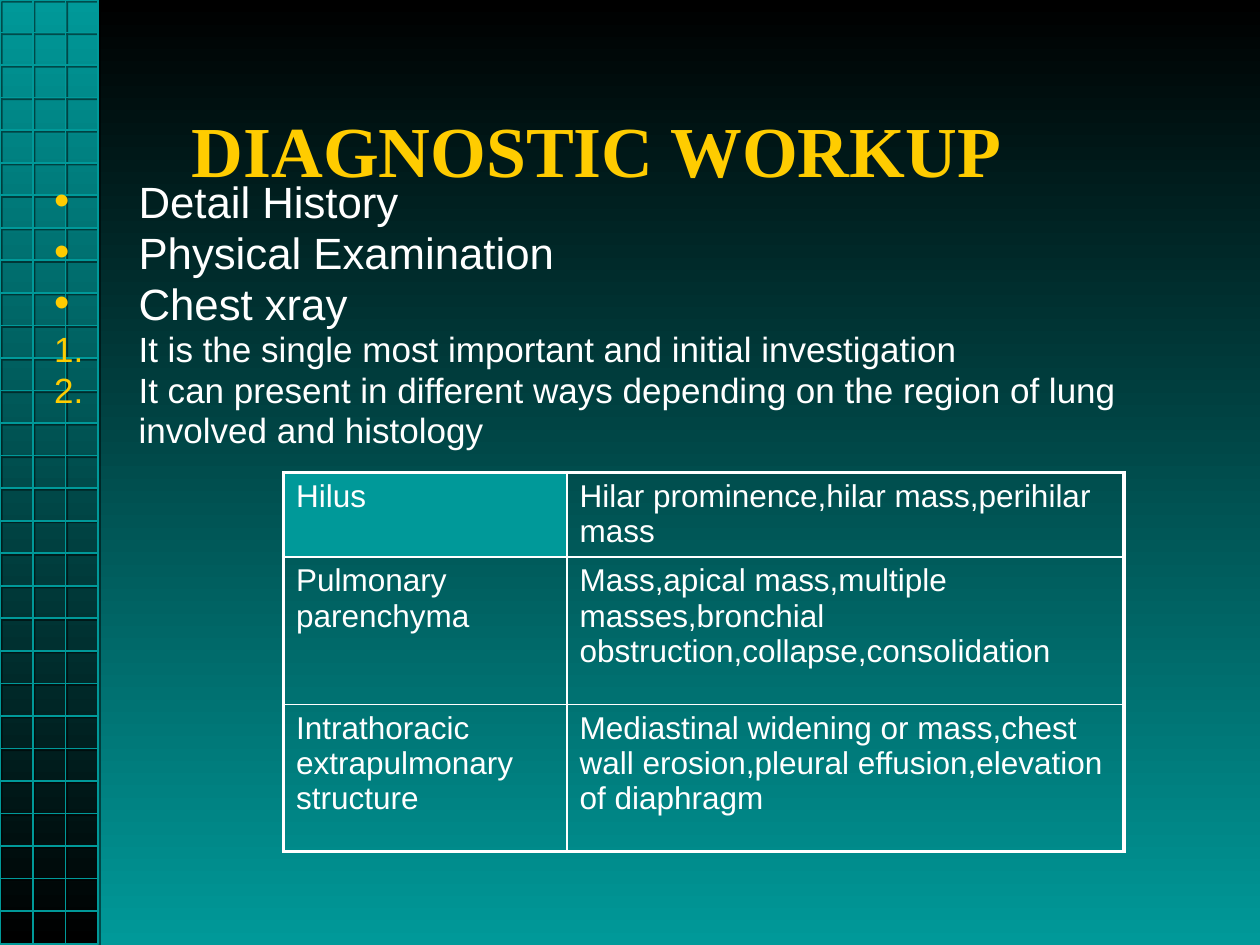
from lxml import etree
from pptx import Presentation
from pptx.dml.color import RGBColor
from pptx.enum.shapes import MSO_SHAPE
from pptx.enum.text import MSO_ANCHOR, MSO_AUTO_SIZE, PP_ALIGN
from pptx.oxml import parse_xml
from pptx.oxml.ns import qn
from pptx.util import Inches, Pt

RECTANGLE = MSO_SHAPE.RECTANGLE
LEFT = PP_ALIGN.LEFT
TOP, MIDDLE = MSO_ANCHOR.TOP, MSO_ANCHOR.MIDDLE
NO_FIT = MSO_AUTO_SIZE.NONE
DRAWING_NS = "http://schemas.openxmlformats.org/drawingml/2006/main"

TITLE = "DIAGNOSTIC WORKUP"
STEPS = ["Detail History", "Physical Examination", "Chest xray"]
XRAY_POINTS = [
    "It is the single most important and initial investigation",
    "It can present in different ways depending on the region of lung involved and histology",
]
FINDINGS = [
    ("Hilus", "Hilar prominence,hilar mass,perihilar mass"),
    ("Pulmonary parenchyma",
     "Mass,apical mass,multiple masses,bronchial obstruction,collapse,consolidation"),
    ("Intrathoracic extrapulmonary structure",
     "Mediastinal widening or mass,chest wall erosion,pleural effusion,elevation of diaphragm"),
]

THEME = {
    "black": "000000", "teal": "009999", "gold": "FFCC00", "white": "FFFFFF",
    "heading_font": "Times New Roman", "text_font": "Arial",
    "title": 41, "step": 25, "point": 20, "cell": 18,
    "outer": 2.25, "inner": 1,
}

SLIDE_SIZE = (10, 7.5)
TITLE_BOX = (1.42, 0.69, 7.95, 0.98)
BODY_BOX = (0.33, 1.42, 9, 5.42)
TABLE_AT = (2.25, 3.75)
COLUMN_WIDTHS = (2.25, 4.42)
ROW_HEIGHTS = (0.67, 1.17, 1.17)
BAND_WIDTH, BAND_HEIGHT = Inches(0.78), Inches(7.49)
BAND_COLUMNS, BAND_ROWS = 3, 29
HANGING = 0.67


def color(name):
    return RGBColor.from_string(THEME[name])


def place(shape, box):
    shape.left, shape.top, shape.width, shape.height = map(Inches, box)


def write(paragraph, text, size, ink="white", font="text_font", bold=False,
          line_spacing=None, before=0):
    paragraph.alignment = LEFT
    if line_spacing:
        paragraph.line_spacing = line_spacing
    paragraph.space_before = Pt(before)
    run = paragraph.add_run()
    run.text = text
    run.font.size = Pt(THEME[size])
    run.font.name = THEME[font]
    run.font.bold = bold
    run.font.color.rgb = color(ink)


def fade_down(fill, start, end):
    fill.gradient()
    fill.gradient_angle = 270
    for stop, name in zip(fill.gradient_stops, (start, end)):
        stop.color.rgb = color(name)


def add_marker(paragraph, numbered):
    """Hang the paragraph from a gold bullet or number."""
    props = paragraph._p.get_or_add_pPr()
    props.set("marL", str(Inches(HANGING)))
    props.set("indent", str(-Inches(HANGING)))
    tint = etree.SubElement(props, qn("a:buClr"))
    etree.SubElement(tint, qn("a:srgbClr"), val=THEME["gold"])
    etree.SubElement(props, qn("a:buFont"), typeface=THEME["text_font"])
    if numbered:
        etree.SubElement(props, qn("a:buAutoNum"), type="arabicPeriod")
    else:
        etree.SubElement(props, qn("a:buChar"), char="•")


def add_borders(cell, widths):
    props = cell._tc.get_or_add_tcPr()
    for side, width in zip("LRTB", widths):
        line = etree.SubElement(props, qn(f"a:ln{side}"), w=str(Pt(width)))
        ink = etree.SubElement(line, qn("a:solidFill"))
        etree.SubElement(ink, qn("a:srgbClr"), val=THEME["white"])


def add_band(slide):
    """Draw the gradient strip and its grid down the left edge."""
    strip = slide.shapes.add_shape(RECTANGLE, 0, 0, BAND_WIDTH, BAND_HEIGHT)
    strip.shadow.inherit = False
    strip.line.fill.background()
    fade_down(strip.fill, "teal", "black")

    across = [BAND_WIDTH * i // BAND_COLUMNS for i in range(BAND_COLUMNS + 1)]
    down = [BAND_HEIGHT * i // BAND_ROWS for i in range(BAND_ROWS + 1)]
    lines = [((x, 0), (x, BAND_HEIGHT)) for x in across]
    lines += [((0, y), (BAND_WIDTH, y)) for y in down]
    builder = slide.shapes.build_freeform()
    for start, end in lines:
        builder.move_to(*start)
        builder.add_line_segments([end], close=False)
    grid = builder.convert_to_shape()
    grid.fill.background()
    grid.line.color.rgb = color("teal")
    grid.line.width = Pt(1)
    grid.element.spPr.append(parse_xml(
        f'<a:effectLst xmlns:a="{DRAWING_NS}">'
        f'<a:outerShdw dist="{Pt(1.4)}" dir="2700000" algn="ctr" rotWithShape="0">'
        f'<a:srgbClr val="{THEME["black"]}"><a:alpha val="50000"/></a:srgbClr>'
        '</a:outerShdw></a:effectLst>'))


def fill_title(title):
    place(title, TITLE_BOX)
    frame = title.text_frame
    frame.auto_size, frame.vertical_anchor, frame.word_wrap = NO_FIT, MIDDLE, True
    write(frame.paragraphs[0], TITLE, "title", ink="gold", font="heading_font", bold=True)


def fill_body(body):
    place(body, BODY_BOX)
    frame = body.text_frame
    frame.auto_size, frame.vertical_anchor, frame.word_wrap = NO_FIT, TOP, True
    items = [(text, "step", False) for text in STEPS]
    items += [(text, "point", True) for text in XRAY_POINTS]
    for i, (text, size, numbered) in enumerate(items):
        paragraph = frame.add_paragraph() if i else frame.paragraphs[0]
        add_marker(paragraph, numbered)
        spacing, gap = 0.8, THEME[size] * 0.2
        if i == len(items) - 1:  # the wrapped point has looser lines, smaller gap
            spacing, gap = 0.95, 1.6
        write(paragraph, text, size, line_spacing=spacing, before=gap if i else 0)


def add_findings(slide):
    rows, columns = len(ROW_HEIGHTS), len(COLUMN_WIDTHS)
    size = (sum(COLUMN_WIDTHS), sum(ROW_HEIGHTS))
    table = slide.shapes.add_table(rows, columns, *map(Inches, TABLE_AT + size)).table
    table.first_row = table.horz_banding = False
    for column, width in zip(table.columns, COLUMN_WIDTHS):
        column.width = Inches(width)
    for r, (row, height) in enumerate(zip(table.rows, ROW_HEIGHTS)):
        row.height = Inches(height)
        for c, cell in enumerate(row.cells):
            on_edge = (c == 0, c == columns - 1, r == 0, r == rows - 1)
            add_borders(cell, [THEME["outer" if edge else "inner"] for edge in on_edge])
            if r == c == 0:
                cell.fill.solid()
                cell.fill.fore_color.rgb = color("teal")
            else:
                cell.fill.background()
            write(cell.text_frame.paragraphs[0], FINDINGS[r][c], "cell")


def main():
    deck = Presentation()
    deck.slide_width, deck.slide_height = map(Inches, SLIDE_SIZE)
    slide = deck.slides.add_slide(deck.slide_layouts[1])
    fade_down(slide.background.fill, "black", "teal")
    title, body = slide.shapes.title, slide.placeholders[1]
    add_band(slide)
    for holder in (body, title):
        slide.shapes.element.append(holder.element)
    fill_body(body)
    fill_title(title)
    add_findings(slide)
    deck.save("out.pptx")


if __name__ == "__main__":
    main()
